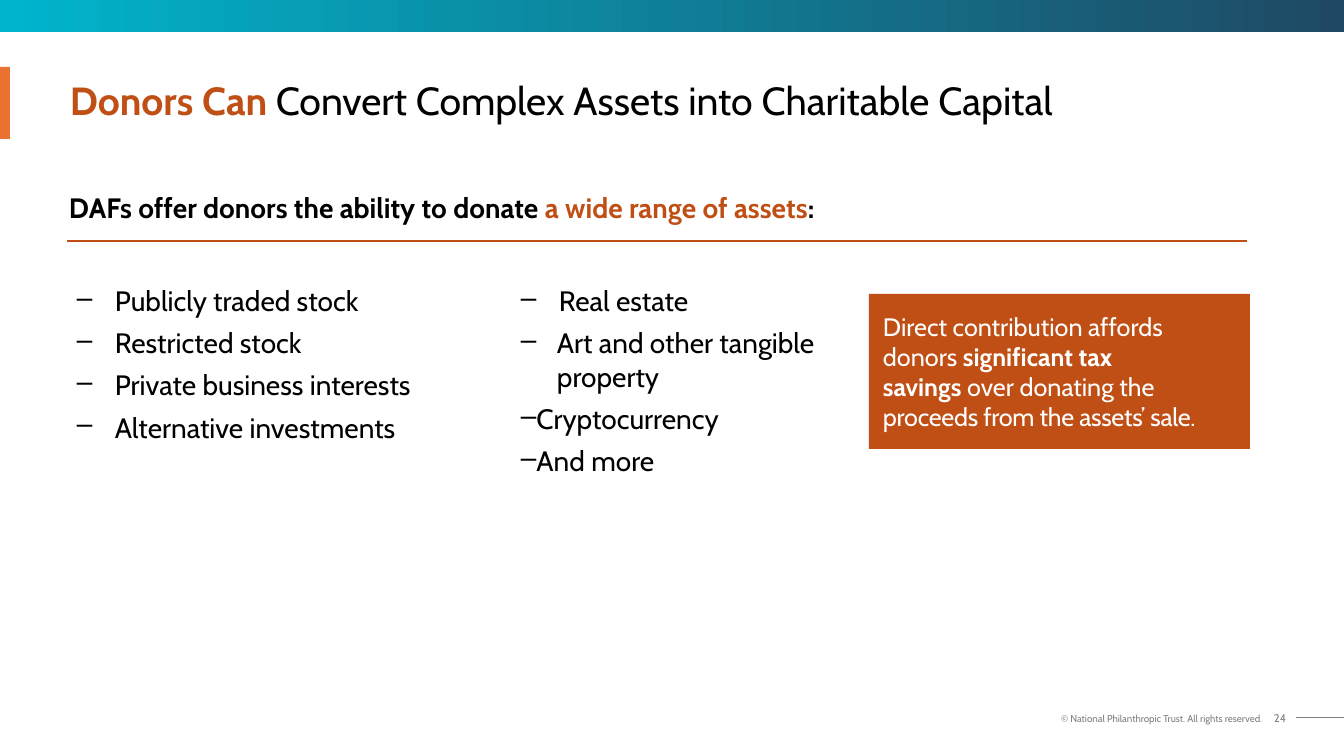
from lxml.etree import SubElement
from pptx import Presentation
from pptx.dml.color import RGBColor
from pptx.enum.shapes import MSO_CONNECTOR, MSO_SHAPE
from pptx.enum.text import MSO_ANCHOR, PP_ALIGN
from pptx.oxml.ns import qn
from pptx.util import Emu, Pt

PX = 12192000 / 1344
WIDE, HIGH = 1344, 756
RUST = RGBColor(0xC0, 0x4F, 0x15)
ORANGE = RGBColor(0xE9, 0x71, 0x32)
CYAN = RGBColor(0x00, 0xB5, 0xCC)
NAVY = RGBColor(0x1F, 0x49, 0x64)
GRAY = RGBColor(0x80, 0x80, 0x80)
BLACK = RGBColor(0, 0, 0)
WHITE = RGBColor(255, 255, 255)

# Each item: text, hanging indent in px
LEFT = [("Publicly traded stock", 38), ("Restricted stock", 38),
        ("Private business interests", 38), ("Alternative investments", 38)]
RIGHT = [("Real estate", 38), ("Art and other tangible \nproperty", 36),
         ("Cryptocurrency", 0), ("And more", 0)]


def px(*nums):
    return [Emu(round(n * PX)) for n in nums]


def write(para, text, size, color, bold=False, space=None):
    """Add a run, with a line break at each newline."""
    for i, part in enumerate(text.split("\n")):
        if i:
            para.add_line_break()
        run = para.add_run()
        run.text = part
        run.font.color.rgb = color
        form = {"name": "Cabin", "size": Pt(size), "bold": bold}
        for key, val in form.items():
            setattr(run.font, key, val)
        if space is not None:
            run._r.get_or_add_rPr().set("spc", str(space))


def label(slide, box, runs, align=PP_ALIGN.LEFT, anchor=MSO_ANCHOR.TOP):
    frame = slide.shapes.add_textbox(*px(*box)).text_frame
    frame.word_wrap = True
    frame.vertical_anchor = anchor
    para = frame.paragraphs[0]
    para.alignment = align
    for run in runs:
        write(para, *run)
    return para


def block(slide, box, color=None):
    """Add a plain rectangle without a line."""
    shape = slide.shapes.add_shape(MSO_SHAPE.RECTANGLE, *px(*box))
    shape.shadow.inherit = False
    shape.line.fill.background()
    if color is not None:
        shape.fill.solid()
        shape.fill.fore_color.rgb = color
    return shape


def rule(slide, left, right, y, color, width):
    line = slide.shapes.add_connector(MSO_CONNECTOR.STRAIGHT,
                                      *px(left, y, right, y))
    line.line.color.rgb = color
    line.line.width = Pt(width)
    SubElement(line._element.spPr, qn("a:effectLst"))


def banner(slide, box):
    fill = block(slide, box).fill
    fill.gradient()
    fill.gradient_angle = 0
    for stop, color in zip(fill.gradient_stops, (CYAN, NAVY)):
        stop.color.rgb = color


def footer(slide, box):
    left, top, width, height = box
    right = left + width
    rule(slide, right - 48, right, top + 12, GRAY, 0.75)
    label(slide, (right - 116, top, 68, height),
          [("24", 8, GRAY)], PP_ALIGN.RIGHT)
    label(slide, (left, top + 2, width - 72, height - 2),
          [("© National Philanthropic Trust. All rights reserved.", 7, GRAY)],
          PP_ALIGN.RIGHT)


def title(slide, box):
    left, top, width, height = box
    block(slide, (left, top, 10, height), ORANGE)
    para = label(slide, (left + 60, top + 3, width - 60, height - 6),
                 [("Donors Can ", 28, RUST, True),
                  ("Convert Complex Assets into Charitable Capital", 28, BLACK)],
                 anchor=MSO_ANCHOR.MIDDLE)
    para.line_spacing = 0.9


def heading(slide, box):
    left, top, width, height = box
    label(slide, (left - 8, top, width, height - 12),
          [("DAFs offer donors the ability to donate ", 20, BLACK, True),
           ("a wide range of assets", 20, RUST, True),
           (":", 20, BLACK, True)])
    rule(slide, left, left + width, top + height, RUST, 1.5)


def bullets(slide, box, items):
    frame = slide.shapes.add_textbox(*px(*box)).text_frame
    frame.word_wrap = True
    for i, (text, indent) in enumerate(items):
        para = frame.add_paragraph() if i else frame.paragraphs[0]
        if i:
            para.space_before = Pt(6)
        props = para._p.get_or_add_pPr()
        hang = px(indent)[0]
        props.set("marL", str(hang))
        props.set("indent", str(-hang))
        SubElement(props, qn("a:buChar"), char="–")
        write(para, text, 20, BLACK)


def callout(slide, box):
    frame = block(slide, box, RUST).text_frame
    form = {"word_wrap": True, "vertical_anchor": MSO_ANCHOR.MIDDLE,
            "margin_left": px(14)[0], "margin_right": px(14)[0]}
    for key, val in form.items():
        setattr(frame, key, val)
    para = frame.paragraphs[0]
    para.alignment = PP_ALIGN.LEFT
    for run in [("Direct contribution affords donors ", 18, WHITE),
                ("significant tax \nsavings ", 18, WHITE, True),
                ("over donating the ", 18, WHITE),
                ("proceeds from the assets’ sale.", 18, WHITE, False, -20)]:
        write(para, *run)


def main():
    deck = Presentation()
    deck.slide_width, deck.slide_height = px(WIDE, HIGH)
    slide = deck.slides.add_slide(deck.slide_layouts[6])
    footer(slide, (1022, 706, WIDE - 1022, 40))
    banner(slide, (0, 0, WIDE, 32))
    title(slide, (0, 67, 1292, 72))
    heading(slide, (67, 186, 1180, 55))
    for left, width, items in ((67, 440, LEFT), (511, 350, RIGHT)):
        bullets(slide, (left, 279, width, 210), items)
    callout(slide, (869, 294, 381, 155))
    deck.save("out.pptx")


if __name__ == "__main__":
    main()
